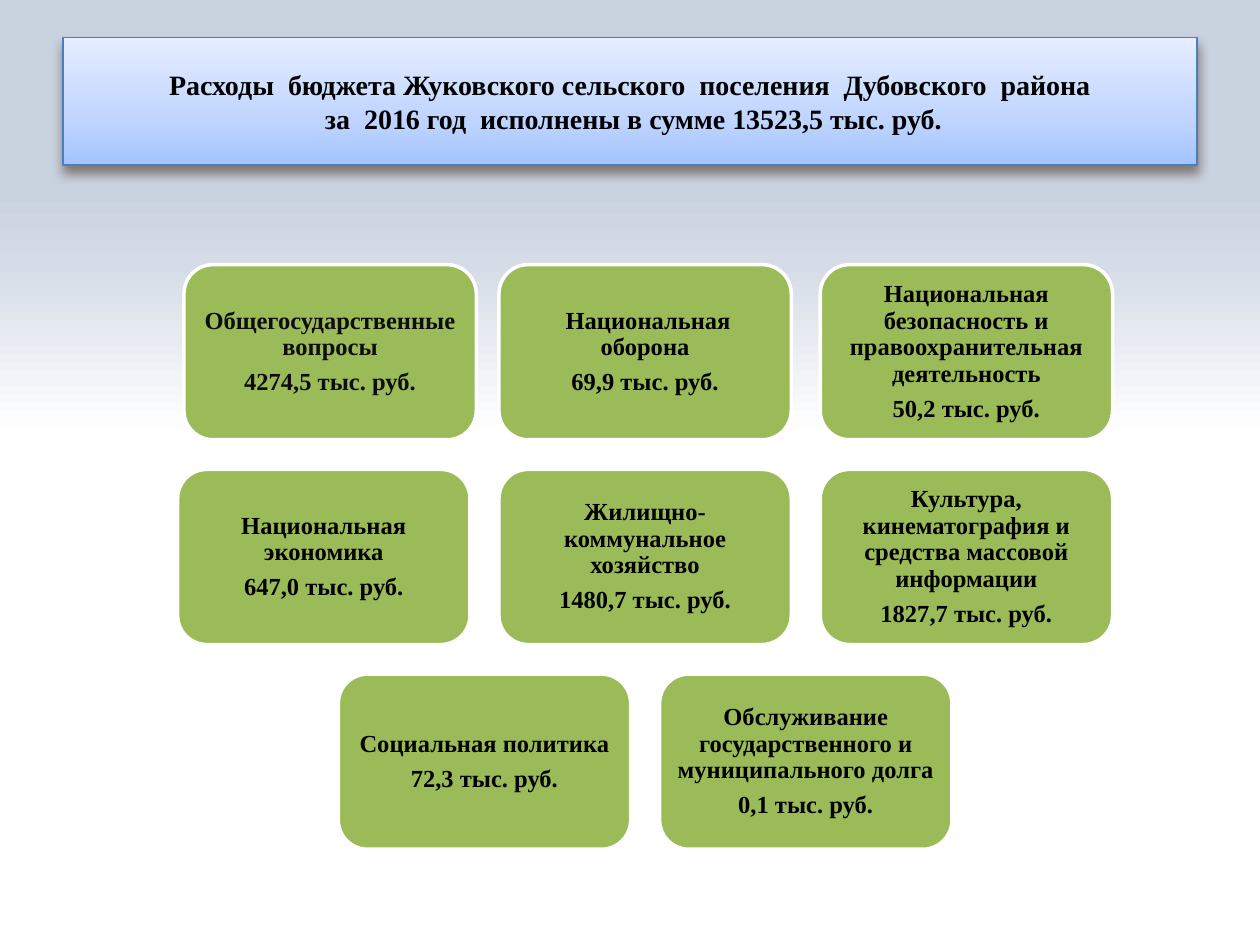
from dataclasses import dataclass

from lxml.etree import SubElement
from pptx import Presentation
from pptx.dml.color import RGBColor
from pptx.dml.fill import FillFormat
from pptx.enum.shapes import MSO_SHAPE
from pptx.enum.text import MSO_ANCHOR, MSO_AUTO_SIZE, PP_ALIGN
from pptx.oxml import parse_xml
from pptx.oxml.ns import nsdecls, qn
from pptx.slide import Slide
from pptx.util import Inches, Pt

FONT = "Times New Roman"
GREEN = "9BBB59"
BLACK = "000000"
WHITE = "FFFFFF"
CARD_WIDTH = 2.32
CARD_HEIGHT = 1.39
COLUMN_STEP = 2.55
ROW_STEP = 1.625
GRID_CENTER = 5.12
GRID_TOP = 2.1


@dataclass
class Expense:
    name: str
    amount: str
    color: str = BLACK
    shift: float = 0


TITLE = (
    "Расходы  бюджета Жуковского сельского  поселения  Дубовского  района\n"
    " за  2016 год  исполнены в сумме 13523,5 тыс. руб."
)
EXPENSE_ROWS = [
    [
        Expense("Общегосударственные вопросы", "4274,5", "0D0D0D", 0.05),
        Expense(" Национальная оборона", "69,9"),
        Expense("Национальная безопасность и правоохранительная деятельность", "50,2"),
    ],
    [
        Expense("Национальная экономика", "647,0"),
        Expense("Жилищно-коммунальное хозяйство", "1480,7"),
        Expense("Культура, кинематография и средства массовой информации", "1827,7"),
    ],
    [
        Expense("Социальная политика", "72,3"),
        Expense("Обслуживание государственного и муниципального долга", "0,1"),
    ],
]


def rgb(color: str) -> RGBColor:
    return RGBColor.from_string(color)


def write_paragraph(paragraph, text: str, *, size: float, color: str = BLACK,
                    line_spacing: float = 1.0, space_after: float = 0) -> None:
    paragraph.text = text
    paragraph.alignment = PP_ALIGN.CENTER
    paragraph.line_spacing = line_spacing
    paragraph.space_after = Pt(space_after)
    for run in paragraph.runs:
        run.font.name = FONT
        run.font.size = Pt(size)
        run.font.bold = True
        run.font.color.rgb = rgb(color)


def set_gradient(fill: FillFormat, parent, stops: list[tuple[int, str]], angle: int) -> None:
    fill.gradient()
    fill.gradient_angle = angle
    stop_list = next(parent.iter(qn("a:gsLst")))
    for stop in list(stop_list):
        stop_list.remove(stop)
    for position, color in stops:
        stop = SubElement(stop_list, qn("a:gs"), pos=str(position * 1000))
        SubElement(stop, qn("a:srgbClr"), val=color)


def draw_title(slide: Slide) -> None:
    title = slide.shapes.title
    title.left, title.top = Inches(0.5), Inches(0.3)
    title.width, title.height = Inches(9), Inches(1.01)
    set_gradient(title.fill, title.element.spPr,
                 [(0, "A4C4FF"), (35, "BFD4FF"), (100, "E6EEFF")], 90)
    title.line.color.rgb = rgb("4B7EBC")
    title.line.width = Pt(0.75)
    title.element.spPr.append(parse_xml(
        f'<a:effectLst {nsdecls("a")}>'
        f'<a:outerShdw blurRad="{Pt(6)}" dist="{Pt(4)}" dir="5400000" rotWithShape="0">'
        '<a:srgbClr val="4E3B30"><a:alpha val="60000"/></a:srgbClr>'
        '</a:outerShdw></a:effectLst>'
    ))
    text_frame = title.text_frame
    text_frame.auto_size = MSO_AUTO_SIZE.NONE
    text_frame.vertical_anchor = MSO_ANCHOR.MIDDLE
    paragraph = text_frame.paragraphs[0]
    write_paragraph(paragraph, TITLE, size=16)
    for line_break in title.element.iter(qn("a:br")):
        SubElement(line_break, qn("a:rPr"), sz="1600")


def draw_card(slide: Slide, expense: Expense, left: float, top: float) -> None:
    card = slide.shapes.add_shape(
        MSO_SHAPE.FLOWCHART_ALTERNATE_PROCESS,
        Inches(left), Inches(top), Inches(CARD_WIDTH), Inches(CARD_HEIGHT),
    )
    card.shadow.inherit = False
    card.fill.solid()
    card.fill.fore_color.rgb = rgb(GREEN)
    card.line.color.rgb = rgb(WHITE)
    card.line.width = Pt(2)
    text_frame = card.text_frame
    text_frame.word_wrap = True
    text_frame.vertical_anchor = MSO_ANCHOR.MIDDLE
    text_frame.margin_left = text_frame.margin_right = Inches(0.06)
    text_frame.margin_top = text_frame.margin_bottom = Inches(0.06)
    paragraphs = [text_frame.paragraphs[0], text_frame.add_paragraph()]
    for paragraph, text in zip(paragraphs, [expense.name, f"{expense.amount} тыс. руб."]):
        write_paragraph(paragraph, text, size=14, color=expense.color,
                        line_spacing=0.9, space_after=4.9)


def draw_expenses(slide: Slide) -> None:
    for row_index, row in enumerate(EXPENSE_ROWS):
        row_width = (len(row) - 1) * COLUMN_STEP + CARD_WIDTH
        row_left = GRID_CENTER - row_width / 2
        for column_index, expense in enumerate(row):
            draw_card(slide, expense,
                      row_left + column_index * COLUMN_STEP + expense.shift,
                      GRID_TOP + row_index * ROW_STEP)


def main() -> None:
    presentation = Presentation()
    presentation.slide_width = Inches(10)
    presentation.slide_height = Inches(7.5)
    slide = presentation.slides.add_slide(presentation.slide_layouts[5])
    set_gradient(slide.background.fill, slide.element,
                 [(0, "C9D2DF"), (20, "C9D2DF"), (28, "D5DCE7"), (46, WHITE), (100, WHITE)], 270)
    draw_title(slide)
    draw_expenses(slide)
    presentation.save("out.pptx")


if __name__ == "__main__":
    main()
